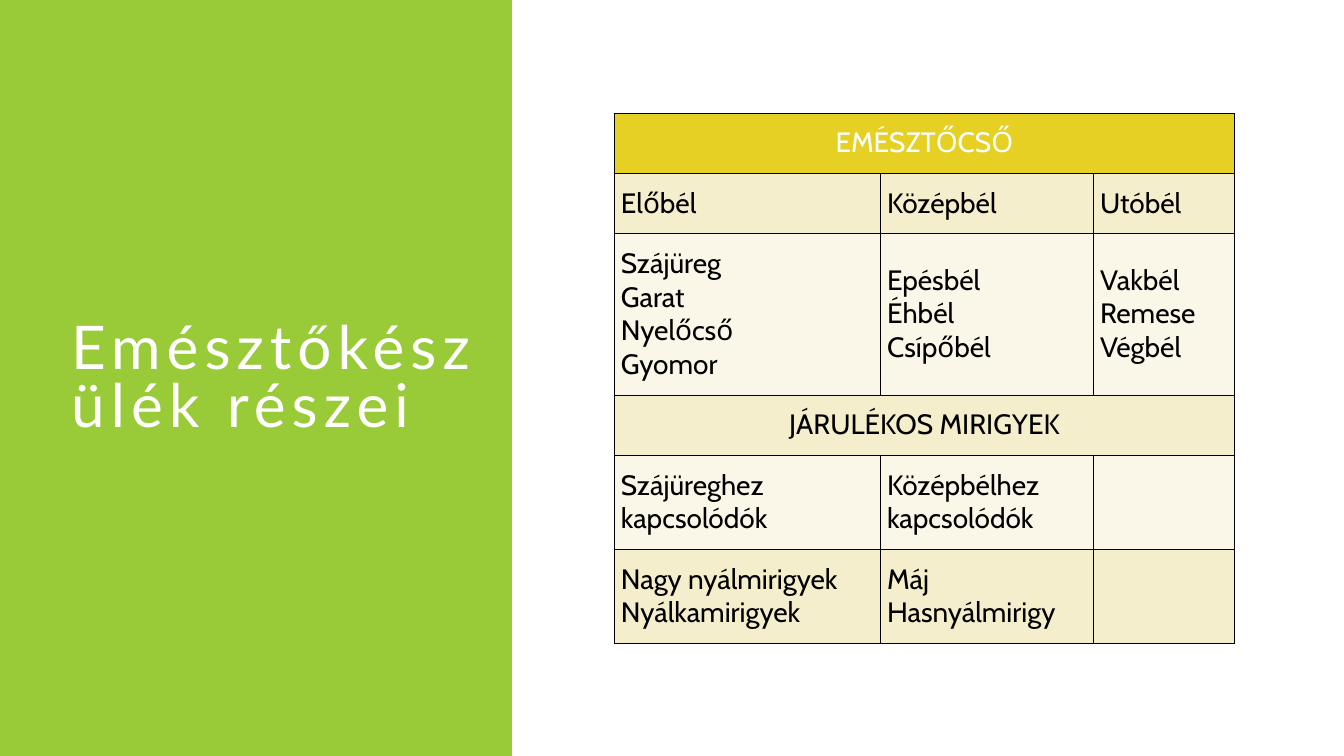
from lxml import etree
from pptx import Presentation
from pptx.dml.color import RGBColor as RGB
from pptx.enum.shapes import MSO_SHAPE as SHAPE
from pptx.enum.text import MSO_ANCHOR as ANCHOR, MSO_AUTO_SIZE as AUTO, PP_ALIGN as ALIGN
from pptx.oxml import parse_xml
from pptx.oxml.ns import nsdecls
from pptx.util import Cm, Pt

COLORS = {
    "panel": "99CB38",
    "header": "E6D024",
    "dark_band": "F5EECC",
    "light_band": "FAF7E8",
    "white": "FFFFFF",
    "black": "000000",
}
COL_WIDTHS = [10.06, 8.05, 5.33]
ROWS = [
    (2.28, "header", ["EMÉSZTŐCSŐ"]),
    (2.28, "dark_band", ["Előbél", "Középbél", "Utóbél"]),
    (6.1, "light_band", ["Szájüreg\nGarat\nNyelőcső\nGyomor",
                         "Epésbél\nÉhbél\nCsípőbél",
                         "Vakbél\nRemese\nVégbél"]),
    (2.28, "dark_band", ["JÁRULÉKOS MIRIGYEK"]),
    (3.56, "light_band", ["Szájüreghez kapcsolódók", "Középbélhez kapcsolódók", ""]),
    (3.56, "dark_band", ["Nagy nyálmirigyek\nNyálkamirigyek", "Máj\nHasnyálmirigy", ""]),
]


def color(name):
    return RGB.from_string(COLORS[name])


def add_borders(cell):
    tc_pr = cell._tc.get_or_add_tcPr()
    for i, side in enumerate(["lnL", "lnR", "lnT", "lnB"]):
        tc_pr.insert(i, parse_xml(
            f'<a:{side} {nsdecls("a")} w="{Pt(0.37)}"><a:solidFill>'
            f'<a:srgbClr val="{COLORS["black"]}"/></a:solidFill></a:{side}>'))


prs = Presentation()
prs.slide_width, prs.slide_height = Cm(50.8), Cm(28.58)
s = prs.slides.add_slide(prs.slide_layouts[5])

panel = s.shapes.add_shape(SHAPE.RECTANGLE, 0, 0, Cm(19.35), prs.slide_height)
panel.shadow.inherit = False
panel.fill.solid()
panel.fill.fore_color.rgb = color("panel")
panel.line.fill.background()

title = s.shapes.title
s.shapes._spTree.append(title._element)
title.left, title.top, title.width, title.height = Cm(2.69), Cm(2.97), Cm(15.37), Cm(22.91)
tf = title.text_frame
tf.word_wrap = True
tf.auto_size = AUTO.NONE
tf.vertical_anchor = ANCHOR.MIDDLE
tf.margin_left = tf.margin_right = tf.margin_top = tf.margin_bottom = 0
p = tf.paragraphs[0]
p.alignment = ALIGN.LEFT
p.line_spacing = Pt(61.9)
p.font.name, p.font.size = "Lato", Pt(64.5)
p.font.color.rgb = color("white")
r = p.add_run()
r.text = "Emésztőkészülék részei"
r.font.name, r.font.size = "Lato", Pt(64.5)
r.font.color.rgb = color("white")
r._r.get_or_add_rPr().set("spc", "660")

frame = s.shapes.add_table(len(ROWS), len(COL_WIDTHS), Cm(23.22), Cm(4.27),
                           Cm(sum(COL_WIDTHS)), Cm(sum(row[0] for row in ROWS)))
table = frame.table
for column, width in zip(table.columns, COL_WIDTHS):
    column.width = Cm(width)

for i, (height, band, texts) in enumerate(ROWS):
    table.rows[i].height = Cm(height)
    is_heading = len(texts) == 1
    if is_heading:
        table.cell(i, 0).merge(table.cell(i, len(COL_WIDTHS) - 1))
    for j, cell in enumerate(table.rows[i].cells):
        cell.fill.solid()
        cell.fill.fore_color.rgb = color(band)
        cell.vertical_anchor = ANCHOR.MIDDLE
        cell.margin_left = cell.margin_right = cell.margin_top = cell.margin_bottom = Cm(0.25)
        add_borders(cell)
        if j >= len(texts):
            continue
        cell.text = texts[j]
        for p in cell.text_frame.paragraphs:
            p.alignment = ALIGN.CENTER if is_heading else ALIGN.LEFT
            p.line_spacing = Pt(36)
            p.font.name, p.font.size, p.font.bold = "Cabin", Pt(30), False
            p.font.color.rgb = color("white" if band == "header" else "black")

prs.save("out.pptx")
